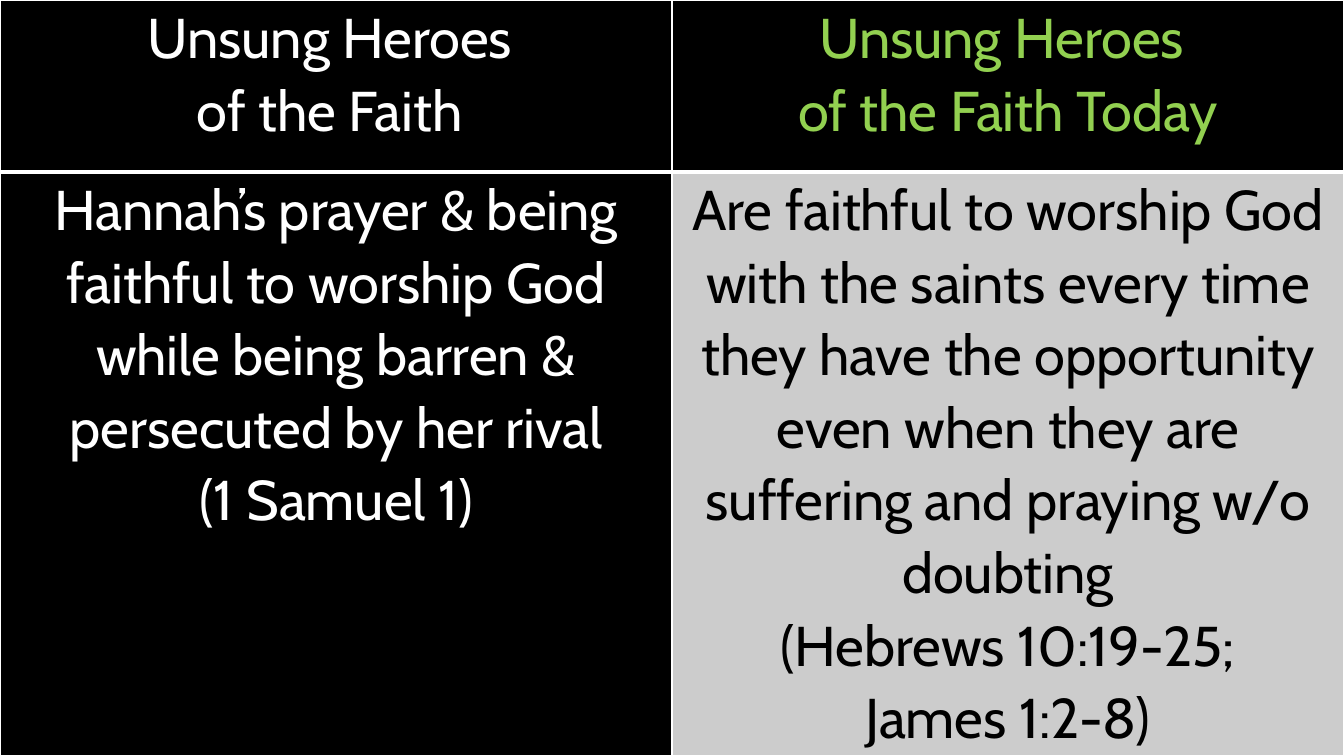
"""Build a two-column comparison slide of unsung heroes of the faith."""
from lxml import etree
from pptx import Presentation
from pptx.dml.color import RGBColor
from pptx.enum.text import PP_ALIGN
from pptx.oxml.ns import qn
from pptx.util import Pt

CENTER = PP_ALIGN.CENTER
EMU_PER_PX = 914400 / 100.8
SLIDE_WIDTH, SLIDE_HEIGHT = 1344, 756
HEADER_HEIGHT = 172
CELL_MARGIN = 7
FONT, FONT_SIZE, LINE_SPACING = "Cabin", 40, 1.07
THIN, THICK = 1, 3

COLORS = {
    "black": "000000",
    "white": "FFFFFF",
    "green": "92D050",
    "gray": "CCCCCC",
}

ROWS = [
    [
        (["Unsung Heroes ", "of the Faith "], "white", "black"),
        (["Unsung Heroes ", "of the Faith Today"], "green", "black"),
    ],
    [
        (
            [
                "Hannah’s prayer & being faithful to worship God",
                "while being barren & persecuted by her rival",
                "(1 Samuel 1)",
            ],
            "white",
            "black",
        ),
        (
            [
                "Are faithful to worship God with the saints every time they have "
                "the opportunity even when they are suffering and praying w/o doubting",
                "(Hebrews 10:19-25;",
                "James 1:2-8)",
            ],
            "black",
            "gray",
        ),
    ],
]


def px(length):
    return round(length * EMU_PER_PX)


def color(name):
    return RGBColor.from_string(COLORS[name])


def set_borders(cell, widths):
    properties = cell._tc.get_or_add_tcPr()
    for side, width in widths.items():
        line = etree.SubElement(properties, qn(f"a:ln{side}"), w=str(Pt(width)))
        fill = etree.SubElement(line, qn("a:solidFill"))
        etree.SubElement(fill, qn("a:srgbClr"), val=COLORS["white"])


def fill_cell(cell, lines, text_color, background):
    cell.fill.solid()
    cell.fill.fore_color.rgb = color(background)
    cell.margin_left = cell.margin_right = px(CELL_MARGIN)
    cell.margin_top = cell.margin_bottom = 0
    cell.text_frame.text = "\n".join(lines)
    for paragraph in cell.text_frame.paragraphs:
        paragraph.alignment = CENTER
        paragraph.line_spacing = LINE_SPACING
        for run in paragraph.runs:
            run.font.name = FONT
            run.font.size = Pt(FONT_SIZE)
            run.font.bold = False
            run.font.color.rgb = color(text_color)


def main():
    presentation = Presentation()
    presentation.slide_width = px(SLIDE_WIDTH)
    presentation.slide_height = px(SLIDE_HEIGHT)
    slide = presentation.slides.add_slide(presentation.slide_layouts[6])
    slide.background.fill.solid()
    slide.background.fill.fore_color.rgb = color("black")

    table = slide.shapes.add_table(
        len(ROWS), len(ROWS[0]), 0, 0, px(SLIDE_WIDTH), px(SLIDE_HEIGHT)
    ).table
    for column in table.columns:
        column.width = px(SLIDE_WIDTH / len(ROWS[0]))
    for row, height in zip(table.rows, (HEADER_HEIGHT, SLIDE_HEIGHT - HEADER_HEIGHT)):
        row.height = px(height)

    for row_index, row in enumerate(ROWS):
        top, bottom = (THIN, THICK) if row_index == 0 else (THICK, THIN)
        for column_index, content in enumerate(row):
            cell = table.cell(row_index, column_index)
            set_borders(cell, {"L": THIN, "R": THIN, "T": top, "B": bottom})
            fill_cell(cell, *content)

    presentation.save("out.pptx")


if __name__ == "__main__":
    main()
